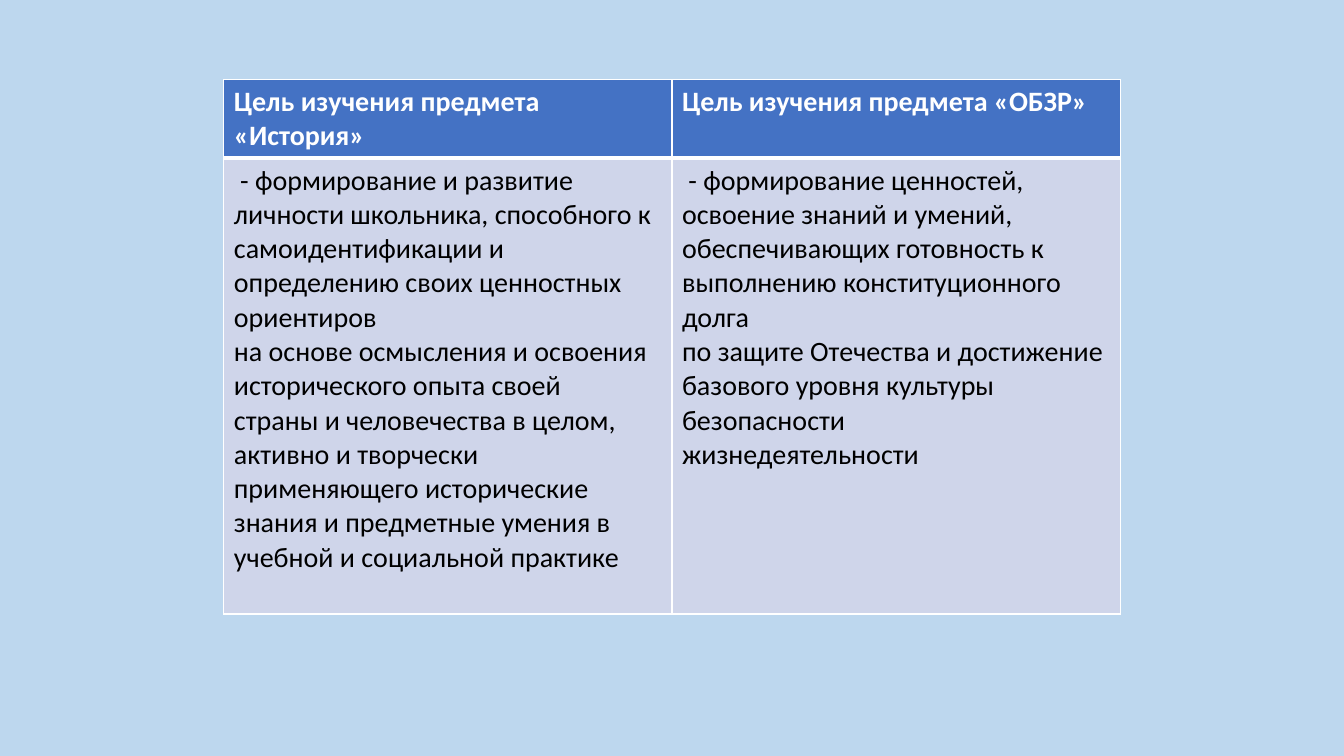
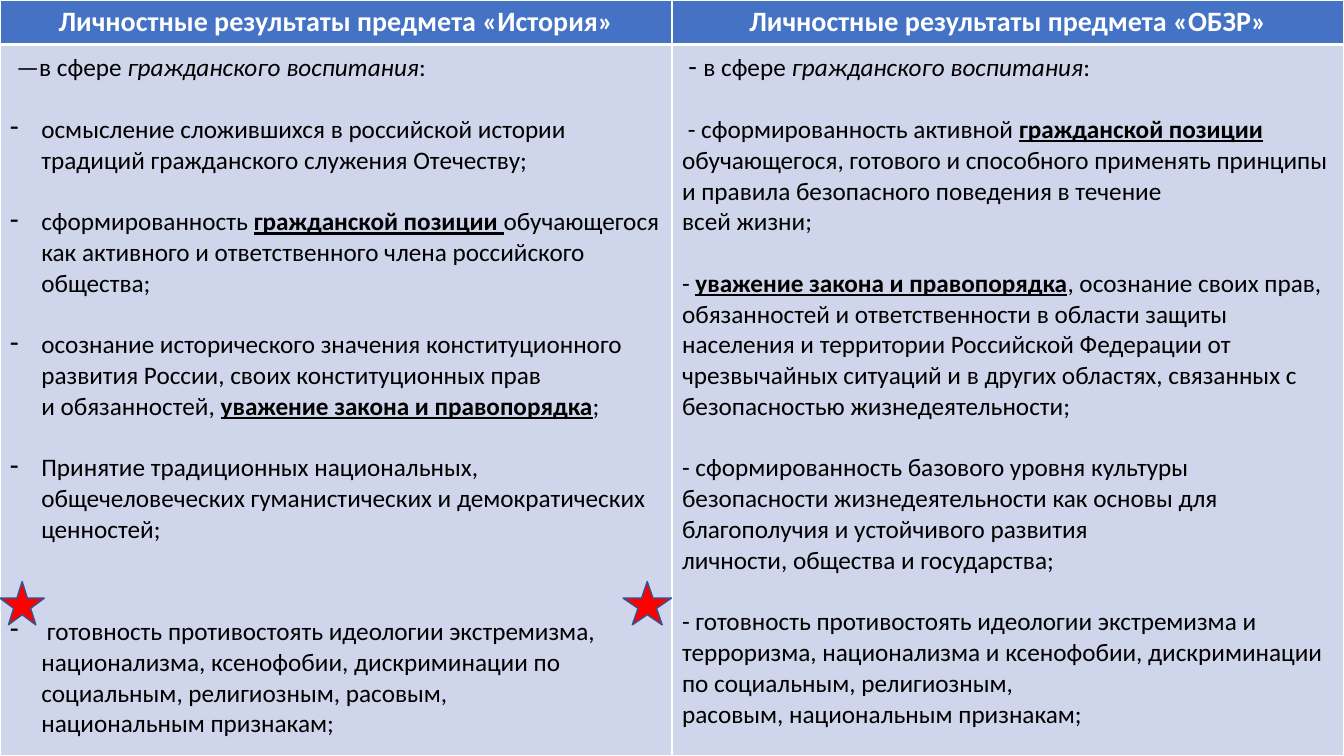
from dataclasses import dataclass

from lxml.etree import SubElement
from pptx import Presentation
from pptx.dml.color import RGBColor
from pptx.enum.shapes import MSO_SHAPE as Shape
from pptx.enum.text import PP_ALIGN as Align
from pptx.oxml import parse_xml
from pptx.oxml.ns import nsdecls, qn
from pptx.util import Inches, Pt


@dataclass(frozen=True)
class Theme:
    font: str = "Calibri"
    background: str = "BDD7EE"
    header: str = "4472C4"
    cell: str = "CFD5EA"
    white: str = "FFFFFF"
    black: str = "000000"
    star: str = "FF0000"
    star_line: str = "325491"
    large: int = 20
    small: int = 18
    thin: int = 1
    thick: int = 3
    indent: float = 0.31


@dataclass(frozen=True)
class Item:
    runs: tuple
    bullet: bool = False
    gap: float = 0


def strong(text):
    return text, "strong"


def italic(text):
    return text, "italic"


def lead(text):
    return text, "lead"


class Deck:
    """Hold the theme and the current slide, and draw each kind of element."""

    def __init__(self, theme):
        self.theme = theme
        self.prs = Presentation()
        self.prs.slide_width = Inches(13.33)
        self.prs.slide_height = Inches(7.5)
        self.paint(self.prs.slide_master.background.fill, theme.background)
        self.slide = None

    def paint(self, fill, color):
        fill.solid()
        fill.fore_color.rgb = RGBColor.from_string(color)

    def add_slide(self):
        self.slide = self.prs.slides.add_slide(self.prs.slide_layouts[6])

    def borders(self, cell, top, bottom):
        theme = self.theme
        widths = {"lnL": theme.thin, "lnR": theme.thin, "lnT": top, "lnB": bottom}
        properties = cell._tc.get_or_add_tcPr()
        for place, (side, width) in enumerate(widths.items()):
            properties.insert(place, parse_xml(
                f'<a:{side} {nsdecls("a")} w="{Pt(width)}"><a:solidFill>'
                f'<a:srgbClr val="{theme.white}"/></a:solidFill></a:{side}>'))

    def write_runs(self, paragraph, runs):
        for part in runs:
            text, style = part if isinstance(part, tuple) else (part, None)
            for number, line in enumerate(text.split("\n")):
                if number:
                    paragraph.add_line_break()
                run = paragraph.add_run()
                run.text = line
                if style == "strong":
                    run.font.bold = run.font.underline = True
                elif style == "italic":
                    run.font.italic = True
                elif style == "lead":
                    run.font.size = Pt(self.theme.large)

    def fill_cell(self, cell, items, size, is_header, align):
        theme = self.theme
        self.paint(cell.fill, theme.header if is_header else theme.cell)
        self.borders(cell, theme.thin if is_header else theme.thick,
                     theme.thick if is_header else theme.thin)
        for number, item in enumerate(items):
            frame = cell.text_frame
            paragraph = frame.add_paragraph() if number else frame.paragraphs[0]
            if item.bullet:
                properties = paragraph._p.get_or_add_pPr()
                properties.set("marL", str(Inches(theme.indent)))
                properties.set("indent", str(-Inches(theme.indent)))
                SubElement(properties, qn("a:buChar")).set("char", "-")
            paragraph.alignment = align
            paragraph.space_before = Pt(item.gap)
            font = paragraph.font
            font.name = theme.font
            font.size = Pt(size)
            font.bold = is_header
            font.color.rgb = RGBColor.from_string(
                theme.white if is_header else theme.black)
            self.write_runs(paragraph, item.runs)

    def comparison(self, box, row_heights, headings, columns, body_size, heading_align):
        table = self.slide.shapes.add_table(2, 2, *map(Inches, box)).table
        for row, height in zip(table.rows, row_heights):
            row.height = Inches(height)
        for number, (heading, items) in enumerate(zip(headings, columns)):
            self.fill_cell(table.cell(0, number), [Item((heading,))],
                           self.theme.large, True, heading_align)
            self.fill_cell(table.cell(1, number), items, body_size, False, Align.LEFT)

    def star(self, left, top, width, height):
        star = self.slide.shapes.add_shape(
            Shape.STAR_5_POINT, *map(Inches, (left, top, width, height)))
        star.shadow.inherit = False
        self.paint(star.fill, self.theme.star)
        self.paint(star.line.fill, self.theme.star_line)
        star.line.width = Pt(self.theme.thin)


def add_goals(deck):
    deck.add_slide()
    history = Item((
        " - формирование и развитие личности школьника, способного к "
        "самоидентификации и определению своих ценностных ориентиров\n"
        "на основе осмысления и освоения исторического опыта своей\n"
        "страны и человечества в целом, активно и творчески применяющего "
        "исторические знания и предметные умения в учебной и социальной практике",))
    safety = Item((
        " - формирование ценностей, освоение знаний и умений, обеспечивающих "
        "готовность к выполнению конституционного долга\n"
        "по защите Отечества и достижение базового уровня культуры безопасности\n"
        "жизнедеятельности",))
    deck.comparison(
        (2.22, 0.79, 8.89, 5.29), (0.77, 4.52),
        ("Цель изучения предмета «История»", "Цель изучения предмета «ОБЗР»"),
        ([history], [safety]), deck.theme.large, Align.LEFT)


def add_results(deck):
    deck.add_slide()
    gap = 22
    history = [
        Item((lead(" "), "—в сфере ", italic("гражданского воспитания"), ":")),
        Item(("осмысление сложившихся в российской истории традиций гражданского "
              "служения Отечеству;",), True, gap),
        Item(("сформированность ", strong("гражданской позиции "),
              "обучающегося как активного и ответственного члена российского\n"
              "общества;"), True, gap),
        Item(("осознание исторического значения конституционного развития России, "
              "своих конституционных прав\nи обязанностей, ",
              strong("уважение закона и правопорядка"), ";"), True, gap),
        Item(("Принятие традиционных национальных, общечеловеческих гуманистических "
              "и демократических ценностей;",), True, gap),
        Item((" готовность противостоять идеологии экстремизма, национализма, "
              "ксенофобии, дискриминации по социальным, религиозным, расовым,\n"
              "национальным признакам;",), True, 51),
    ]
    safety = [
        Item((lead(" - "), "в сфере ", italic("гражданского воспитания"), ":")),
        Item((" - сформированность активной ", strong("гражданской позиции "),
              "обучающегося, готового и способного применять принципы и правила "
              "безопасного поведения в течение\nвсей жизни;"), gap=gap),
        Item(("- ", strong("уважение закона и правопорядка"),
              ", осознание своих прав, обязанностей и ответственности в области "
              "защиты населения и территории Российской Федерации от чрезвычайных "
              "ситуаций и в других областях, связанных с безопасностью "
              "жизнедеятельности;"), gap=gap),
        Item(("- сформированность базового уровня культуры безопасности "
              "жизнедеятельности как основы для благополучия и устойчивого развития\n"
              "личности, общества и государства;",), gap=gap),
        Item(("- готовность противостоять идеологии экстремизма и терроризма, "
              "национализма и ксенофобии, дискриминации по социальным, религиозным,\n"
              "расовым, национальным признакам;",), gap=gap),
    ]
    deck.comparison(
        (0, 0, 13.33, 7.5), (0.44, 7.06),
        ("Личностные результаты предмета «История»",
         "Личностные результаты предмета «ОБЗР»"),
        (history, safety), deck.theme.small, Align.CENTER)
    for left, width in ((0, 0.44), (6.18, 0.48)):
        deck.star(left, 5.77, width, 0.43)


def main():
    deck = Deck(Theme())
    add_goals(deck)
    add_results(deck)
    deck.prs.save("out.pptx")


if __name__ == "__main__":
    main()
